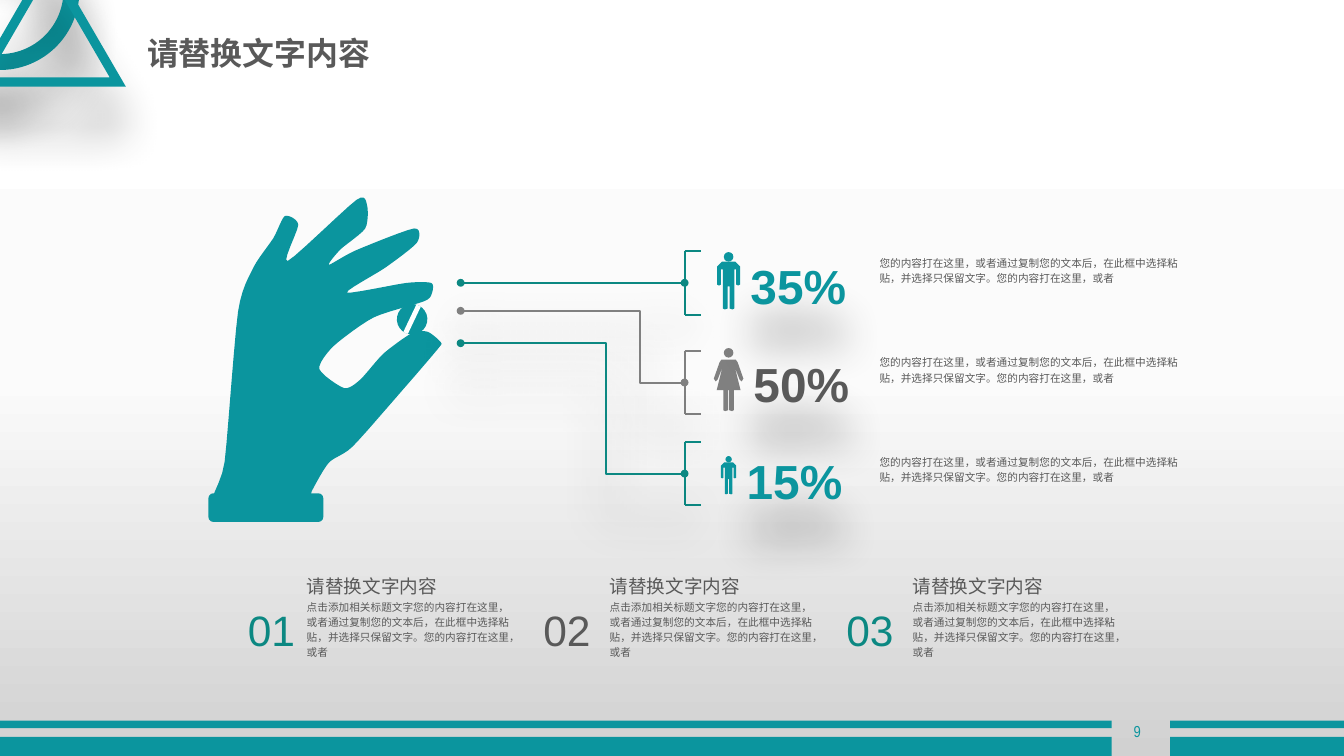
from copy import deepcopy
from dataclasses import dataclass

from lxml import etree
from pptx import Presentation
from pptx.dml.color import RGBColor
from pptx.enum.shapes import MSO_CONNECTOR, MSO_SHAPE
from pptx.enum.text import MSO_ANCHOR, MSO_AUTO_SIZE, PP_ALIGN
from pptx.oxml.ns import qn
from pptx.util import Cm, Pt

STRAIGHT, ELBOW = MSO_CONNECTOR.STRAIGHT, MSO_CONNECTOR.ELBOW
RECTANGLE, ROUNDED = MSO_SHAPE.RECTANGLE, MSO_SHAPE.ROUNDED_RECTANGLE
OVAL, DONUT, TRIANGLE = MSO_SHAPE.OVAL, MSO_SHAPE.DONUT, MSO_SHAPE.ISOSCELES_TRIANGLE
TOP, MIDDLE, BOTTOM = MSO_ANCHOR.TOP, MSO_ANCHOR.MIDDLE, MSO_ANCHOR.BOTTOM
LEFT, CENTER = PP_ALIGN.LEFT, PP_ALIGN.CENTER
GROW, FIXED = MSO_AUTO_SIZE.SHAPE_TO_FIT_TEXT, MSO_AUTO_SIZE.NONE


@dataclass(frozen=True)
class Theme:
    teal: str = "0B959E"
    dark_teal: str = "0C8882"
    gray: str = "808080"
    text: str = "595959"
    white: str = "FFFFFF"
    background: tuple = ("FFFFFF", "FBFBFB", "D1D1D1")
    font: str = "Arial"
    narrow: str = "Arial Narrow"
    chinese: str = "Noto Sans CJK SC"
    title: int = 24
    percent: int = 36
    number: int = 32
    heading: int = 14
    page: int = 12
    body: int = 8
    line: float = 1.5
    frame: int = 7


THEME = Theme()
HEADING = "请替换文字内容"
DETAIL = "您的内容打在这里，或者通过复制您的文本后，在此框中选择粘贴，并选择只保留文字。您的内容打在这里，或者"

# Points of the hand, in hundredths of an inch, joined by a smooth curve.
HAND = [
    (95, 323), (102, 305), (120, 275), (145, 258), (198, 198), (234, 156), (237, 149), (223, 138),
    (206, 140), (177, 161), (153, 188), (136, 197), (110, 177), (125, 153), (167, 123), (220, 106),
    (228, 97), (227, 87), (201, 87), (139, 97), (179, 71), (212, 45), (209, 30), (148, 53),
    (120, 68), (132, 52), (158, 30), (160, 6), (149, 0), (77, 64), (88, 26), (74, 17),
    (62, 40), (41, 71), (25, 117), (11, 274), (0, 323)]
# Left halves of the figures; the right halves mirror them.
MAN = [(5, 10), (0, 15), (0, 34), (2, 35), (4, 34), (4, 18), (6, 18), (6, 59), (8, 60), (11, 59), (11, 36)]
WOMAN = [(8, 12), (6, 15), (0, 32), (2, 35), (4, 33), (9, 20), (3, 44), (10, 44), (10, 65), (12, 66),
         (15, 65), (15, 44)]
MAN_WIDTH, WOMAN_WIDTH, HEAD = 24, 31, 10
UNIT = 0.0254


def set_effects(shape, shadow=False):
    """Leave the shape without a shadow, or give it the soft one below."""
    properties = shape._element.spPr
    for old in properties.findall(qn("a:effectLst")):
        properties.remove(old)
    effects = etree.SubElement(properties, qn("a:effectLst"))
    if shadow:
        depth = str(Pt(33))
        outer = etree.SubElement(effects, qn("a:outerShdw"), blurRad=depth, dist=depth,
                                 dir="5400000", algn="t", rotWithShape="0")
        black = etree.SubElement(outer, qn("a:srgbClr"), val="000000")
        etree.SubElement(black, qn("a:alpha"), val="43000")


def paint(shape, color, shadow=False):
    shape.fill.solid()
    shape.fill.fore_color.rgb = RGBColor.from_string(color)
    shape.line.fill.background()
    set_effects(shape, shadow)
    return shape


def add_solid(slide, kind, box, color, shadow=False):
    return paint(slide.shapes.add_shape(kind, *map(Cm, box)), color, shadow)


def add_text(slide, box, text, size, color, font=THEME.font, bold=False, align=LEFT, anchor=TOP,
             wrap=True, spacing=None, before=0.2, inset=0, auto_size=GROW):
    """Add a text box; before is the space above, as a share of the type size."""
    shape = slide.shapes.add_textbox(*map(Cm, box))
    frame = shape.text_frame
    margins = {f"margin_{side}": Cm(inset) for side in ("left", "top", "right", "bottom")}
    paragraph = frame.paragraphs[0]
    run = paragraph.add_run()
    run.text = text
    formats = (
        (frame, {"word_wrap": wrap, "auto_size": auto_size, "vertical_anchor": anchor, **margins}),
        (paragraph, {"alignment": align, "line_spacing": spacing, "space_before": Pt(before * size)}),
        (run.font, {"name": font, "size": Pt(size), "bold": bold}))
    for target, values in formats:
        for name, value in values.items():
            setattr(target, name, value)
    run.font.color.rgb = RGBColor.from_string(color)
    etree.SubElement(run._r.get_or_add_rPr(), qn("a:ea"), typeface=THEME.chinese)
    return shape


def add_line(slide, kind, start, end, color, dots=False, bend=None):
    line = slide.shapes.add_connector(kind, *map(Cm, (*start, *end)))
    line.line.color.rgb = RGBColor.from_string(color)
    line.line.width = Pt(THEME.line)
    if dots:
        for tag in ("a:headEnd", "a:tailEnd"):
            etree.SubElement(line._element.spPr.find(qn("a:ln")), qn(tag), type="oval")
    if bend:
        guides = line._element.spPr.find(qn("a:prstGeom")).get_or_add_avLst()
        etree.SubElement(guides, qn("a:gd"), name="adj1", fmla=f"val {round(bend * 100000)}")
    set_effects(line, shadow=dots)


def smooth(points, steps=6, pull=0.12):
    """Return the points of a closed curve through the given ones."""
    curve = []
    for index, end in enumerate(points):
        before, start, after = points[index - 2], points[index - 1], points[(index + 1) % len(points)]
        for step in range(steps):
            t = step / steps
            u = 1 - t
            curve.append(tuple(
                u ** 3 * s + 3 * u * u * t * (s + pull * (e - b))
                + 3 * u * t * t * (e - pull * (a - s)) + t ** 3 * e
                for b, s, e, a in zip(before, start, end, after)))
    return curve


def add_outline(slide, points, left, top, unit, color, precision=100):
    points = [(x * precision, y * precision) for x, y in points]
    builder = slide.shapes.build_freeform(*points[0], scale=Cm(1) * unit / precision)
    builder.add_line_segments(points[1:], close=True)
    paint(builder.convert_to_shape(Cm(left), Cm(top)), color)


def add_hand(slide, left, top):
    add_outline(slide, smooth(HAND), left + 0.15, top, UNIT, THEME.teal)
    add_solid(slide, ROUNDED, (left, top + 7.8, 3.05, 0.76), THEME.teal)
    size, center = 0.81, left + 5.41
    for kind, width, color in ((OVAL, size, THEME.teal), (ROUNDED, 0.13, THEME.white)):
        part = add_solid(slide, kind, (center - width / 2, top + 2.77, width, size), color)
        part.rotation = 25.4


def add_person(slide, half, width, center, top, unit, color):
    mirrored = [(width - x, y) for x, y in reversed(half)]
    add_outline(slide, half + mirrored, center - width * unit / 2, top, unit, color)
    head = HEAD * unit
    add_solid(slide, OVAL, (center - head / 2, top, head, head), color)


def add_branch(slide, left, top, start, bend, color):
    """Draw a bracket, and the line that leads to its middle."""
    height, arm = 1.69, 0.43
    add_line(slide, STRAIGHT, (left, top), (left, top + height), color)
    for y in (top, top + height):
        add_line(slide, STRAIGHT, (left, y), (left + arm, y), color)
    middle = (left, top + height / 2)
    add_line(slide, ELBOW if bend else STRAIGHT, start, middle, color, dots=True, bend=bend)


def add_share(slide, left, center, share, color):
    height = 1.85
    box = (left, center - height / 2, 2.57, height)
    percent = add_text(slide, box, share, THEME.percent, color, bold=True, anchor=MIDDLE, wrap=False,
                       spacing=1.2)
    set_effects(percent, shadow=True)


def add_column(slide, left, top, number_left, number, color):
    add_text(slide, (left, top, 3.48, 0.66), HEADING, THEME.heading, THEME.text, anchor=MIDDLE,
             wrap=False, spacing=1.2, before=0)
    add_text(slide, (left, top + 0.69, 5.61, 1.65), "点击添加相关标题文字" + DETAIL, THEME.body,
             THEME.text, anchor=MIDDLE, spacing=1.2)
    add_text(slide, (number_left, top + 0.84, 1.27, 1.37), number, THEME.number, color, align=CENTER,
             anchor=BOTTOM, wrap=False)


def add_frame(slide):
    """Background, corner ornament, footer bars, page number and title."""
    fill = slide.background.fill
    fill.gradient()
    fill.gradient_angle = 270
    stops = slide._element.find(".//" + qn("a:gsLst"))
    stops.insert(1, deepcopy(stops[0]))
    for index, (stop, color) in enumerate(zip(fill.gradient_stops, THEME.background)):
        stop.position = index / 2
        stop.color.rgb = RGBColor.from_string(color)
    add_solid(slide, DONUT, (-2.11, -2.36, 4.22, 4.22), THEME.teal, True).adjustments[0] = 0.1
    triangle = add_solid(slide, TRIANGLE, (-0.53, -0.97, 3.66, 3.15), THEME.teal, True)
    triangle.fill.background()
    triangle.line.color.rgb = RGBColor.from_string(THEME.teal)
    triangle.line.width = Pt(THEME.frame)
    etree.SubElement(triangle._element.spPr.find(qn("a:ln")), qn("a:miter"), lim="800000")
    for left, width in ((0, 29.54), (31.09, 4.62)):
        for top, height in ((19.58, 0.51), (19.15, 0.2)):
            add_solid(slide, RECTANGLE, (left, top, width, height), THEME.teal)
    add_text(slide, (29.57, 18.82, 1.3, 1.22), "9", THEME.page, THEME.teal, THEME.narrow, align=CENTER,
             anchor=MIDDLE, before=0, inset=0.13, auto_size=FIXED)
    add_text(slide, (3.66, 0.89, 9.8, 1.14), HEADING, THEME.title, THEME.text, THEME.chinese, bold=True,
             anchor=MIDDLE, spacing=0.9, before=0.4, inset=0.25, auto_size=FIXED)


def main():
    presentation = Presentation()
    presentation.slide_width, presentation.slide_height = Cm(35.71), Cm(20.09)
    slide = presentation.slides.add_slide(presentation.slide_layouts[6])
    add_frame(slide)
    add_hand(slide, 5.54, 5.31)
    branches = ((6.67, 7.515, None, THEME.dark_teal), (9.32, 8.26, 0.8, THEME.gray),
                (11.74, 9.12, 0.65, THEME.dark_teal))
    for top, start_y, bend, color in branches:
        add_branch(slide, 18.19, top, (12.24, start_y), bend, color)
    people = ((MAN, MAN_WIDTH, 6.7, UNIT, THEME.teal), (WOMAN, WOMAN_WIDTH, 9.25, UNIT, THEME.gray),
              (MAN, MAN_WIDTH, 12.12, UNIT * 2 / 3, THEME.teal))
    for half, width, top, unit, color in people:
        add_person(slide, half, width, 19.36, top, unit, color)
    shares = (("35%", 19.94, 7.43, THEME.teal), ("50%", 20.02, 10.03, THEME.text),
              ("15%", 19.84, 12.61, THEME.teal))
    for row, (share, left, center, color) in enumerate(shares):
        add_share(slide, left, center, share, color)
        add_text(slide, (23.37, 6.76 + 2.64 * row, 7.98, 0.79), DETAIL, THEME.body, THEME.text, spacing=1.2)
    columns = (("01", 6.58, THEME.dark_teal), ("02", 14.43, THEME.text), ("03", 22.48, THEME.dark_teal))
    for index, (number, number_left, color) in enumerate(columns):
        add_column(slide, 8.15 + 8.05 * index, 15.19, number_left, number, color)
    presentation.save("out.pptx")


if __name__ == "__main__":
    main()
